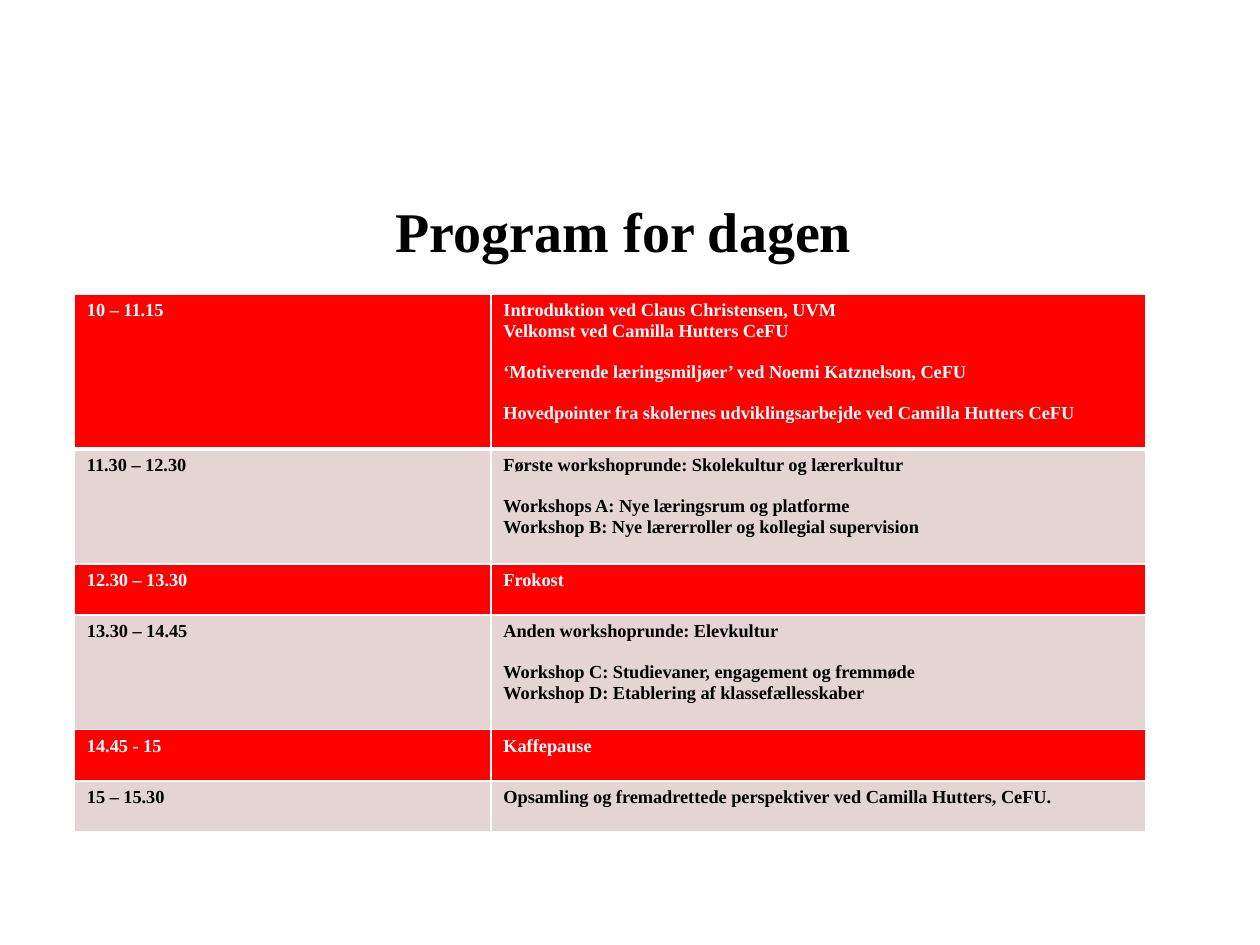
from lxml.etree import SubElement
from pptx import Presentation
from pptx.dml.color import RGBColor
from pptx.enum.text import MSO_ANCHOR, PP_ALIGN
from pptx.oxml.ns import qn
from pptx.util import Pt

TITLE = "Program for dagen"
# Time, then groups of lines; groups are set apart by one line's space
PROGRAM = [
    ("10 – 11.15", [
        ["Introduktion ved Claus Christensen, UVM",
         "Velkomst ved Camilla Hutters CeFU"],
        ["‘Motiverende læringsmiljøer’ ved Noemi Katznelson, CeFU"],
        ["Hovedpointer fra skolernes udviklingsarbejde ved Camilla Hutters CeFU"]]),
    ("11.30 – 12.30", [
        ["Første workshoprunde: Skolekultur og lærerkultur"],
        ["Workshops A: Nye læringsrum og platforme",
         "Workshop B: Nye lærerroller og kollegial supervision"]]),
    ("12.30 – 13.30", [["Frokost"]]),
    ("13.30 – 14.45", [
        ["Anden workshoprunde: Elevkultur"],
        ["Workshop C: Studievaner, engagement og fremmøde",
         "Workshop D: Etablering af klassefællesskaber"]]),
    ("14.45 - 15", [["Kaffepause"]]),
    ("15 – 15.30", [["Opsamling og fremadrettede perspektiver ved Camilla Hutters, CeFU."]]),
]
COLORS = {"red": "FF0000", "pale": "E4D4D4", "white": "FFFFFF", "black": "000000"}
FONT = "Times New Roman"
LEFT, TOP = 42.5, 168
COL_WIDTHS = (238, 374)
ROW_HEIGHTS = (88.6, 65.6, 29.2, 65.6, 29.2, 29.2)
LINE = 11.7


def rgb(name):
    return RGBColor.from_string(COLORS[name])


def style(p, size, color):
    for r in p.runs:
        r.font.name = FONT
        r.font.size = Pt(size)
        r.font.bold = True
        r.font.color.rgb = rgb(color)


def set_borders(cell, bottom):
    tcPr = cell._tc.get_or_add_tcPr()
    for i, (side, width) in enumerate((("L", 1), ("R", 1), ("T", 1), ("B", bottom))):
        ln = SubElement(tcPr, qn(f"a:ln{side}"), w=str(Pt(width)))
        fill = SubElement(ln, qn("a:solidFill"))
        SubElement(fill, qn("a:srgbClr"), val=COLORS["white"])
        tcPr.insert(i, ln)  # borders come before the fill


def fill_cell(cell, groups, back, color, bottom):
    cell.fill.solid()
    cell.fill.fore_color.rgb = rgb(back)
    set_borders(cell, bottom)
    tf = cell.text_frame
    tf.text = "\n".join(line for group in groups for line in group)
    starts = [sum(map(len, groups[:i])) for i in range(1, len(groups))]
    for i, p in enumerate(tf.paragraphs):
        p.line_spacing = Pt(LINE)
        if i in starts:
            p.space_before = Pt(LINE)
        style(p, 10.5, color)


prs = Presentation()
prs.slide_width, prs.slide_height = Pt(720), Pt(540)
s = prs.slides.add_slide(prs.slide_layouts[5])

# Title
title = s.shapes.title
title.left, title.top, title.width, title.height = Pt(50.4), Pt(90), Pt(612), Pt(83.5)
tf = title.text_frame
tf.text = TITLE
tf.vertical_anchor = MSO_ANCHOR.MIDDLE
p = tf.paragraphs[0]
p.alignment = PP_ALIGN.CENTER
style(p, 32, "black")

# Programme table
table = s.shapes.add_table(len(PROGRAM), len(COL_WIDTHS), Pt(LEFT), Pt(TOP),
                           Pt(sum(COL_WIDTHS)), Pt(sum(ROW_HEIGHTS))).table
for col, width in zip(table.columns, COL_WIDTHS):
    col.width = Pt(width)
for i, (time, groups) in enumerate(PROGRAM):
    table.rows[i].height = Pt(ROW_HEIGHTS[i])
    back, color = ("pale", "black") if i % 2 else ("red", "white")
    bottom = 1 if i else 3
    fill_cell(table.cell(i, 0), [[time]], back, color, bottom)
    fill_cell(table.cell(i, 1), groups, back, color, bottom)
    if i == 1:  # shares the thick line under the first row
        for cell in table.rows[i].cells:
            cell._tc.tcPr.find(qn("a:lnT")).set("w", str(Pt(3)))

prs.save("out.pptx")
